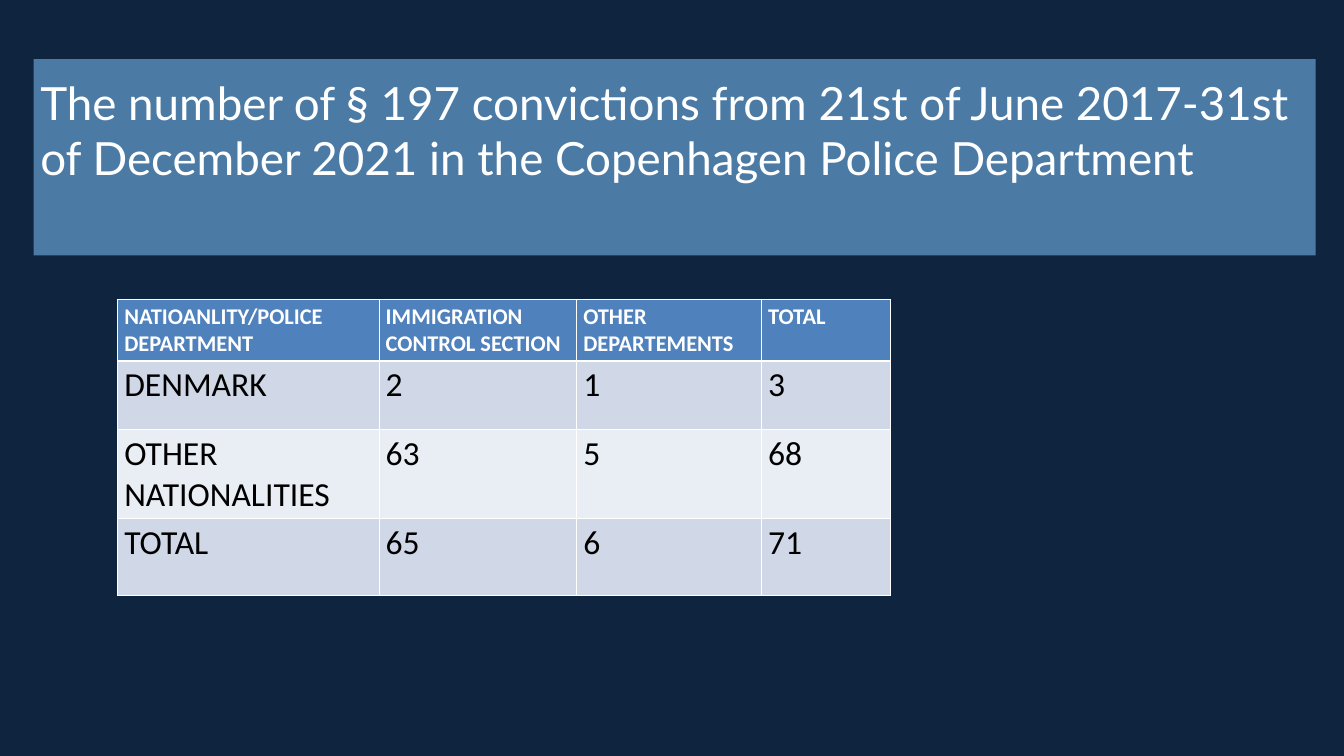
from dataclasses import dataclass

from lxml.etree import SubElement
from pptx import Presentation
from pptx.dml.color import RGBColor
from pptx.enum.text import MSO_ANCHOR, MSO_AUTO_SIZE, PP_ALIGN
from pptx.oxml.ns import qn
from pptx.util import Inches, Pt


@dataclass(frozen=True)
class Theme:
    background: str = "0F243E"
    title_band: str = "4B7BA5"
    header: str = "4F81BD"
    bands: tuple = ("D0D8E8", "E9EDF4")
    light: str = "FFFFFF"
    dark: str = "000000"
    title_font: str = "Lato"
    table_font: str = "Calibri"
    title_size: int = 49
    header_size: int = 24
    body_size: int = 36


theme = Theme()


def add_span(para, text, font, size, color, bold=False):
    span = para.add_run()
    span.text = text
    span.font.name = font
    span.font.size = Pt(size)
    span.font.bold = bold
    span.font.color.rgb = RGBColor.from_string(color)


def add_borders(cell, bottom_width):
    """Draw light borders; call before the fill, which must follow them in the XML."""
    properties = cell._tc.get_or_add_tcPr()
    for side, width in (("L", 1), ("R", 1), ("T", 1), ("B", bottom_width)):
        line = SubElement(properties, qn(f"a:ln{side}"), w=str(Pt(width)))
        fill = SubElement(line, qn("a:solidFill"))
        SubElement(fill, qn("a:srgbClr"), val=theme.light)


deck = Presentation()
deck.slide_width, deck.slide_height = Inches(20), Inches(11.25)
page = deck.slides.add_slide(deck.slide_layouts.get_by_name("Title Only"))
page.background.fill.solid()
page.background.fill.fore_color.rgb = RGBColor.from_string(theme.background)

# Title band
title = page.shapes.title
title.left, title.top = Inches(0.5), Inches(0.88)
title.width, title.height = Inches(19.08), Inches(2.92)
title.fill.solid()
title.fill.fore_color.rgb = RGBColor.from_string(theme.title_band)
frame = title.text_frame
frame.word_wrap = True
frame.auto_size = MSO_AUTO_SIZE.NONE
frame.vertical_anchor = MSO_ANCHOR.MIDDLE
frame.margin_bottom = Inches(0.87)  # lifts the two lines above the middle
para = frame.paragraphs[0]
para.alignment = PP_ALIGN.LEFT
add_span(
    para,
    "The number of § 197 convictions from 21st of June 2017-31st "
    "of December 2021 in the Copenhagen Police Department",
    theme.title_font, theme.title_size, theme.light,
)

# Convictions table
convictions = [
    ("NATIOANLITY/POLICE DEPARTMENT", "IMMIGRATION CONTROL SECTION", "OTHER DEPARTEMENTS", "TOTAL"),
    ("DENMARK", "2", "1", "3"),
    ("OTHER NATIONALITIES", "63", "5", "68"),
    ("TOTAL", "65", "6", "71"),
]
column_widths = (3.89, 2.94, 2.75, 1.92)
row_heights = (0.72, 1.02, 1.25, 1.15)

table = page.shapes.add_table(
    len(row_heights), len(column_widths),
    Inches(1.75), Inches(4.46), Inches(11.5), Inches(4.37),
).table
for column, width in zip(table.columns, column_widths):
    column.width = Inches(width)

for row_index, (row, height, texts) in enumerate(zip(table.rows, row_heights, convictions)):
    row.height = Inches(height)
    is_header = row_index == 0
    fill = theme.header if is_header else theme.bands[(row_index - 1) % 2]
    size = theme.header_size if is_header else theme.body_size
    color = theme.light if is_header else theme.dark
    for cell, text in zip(row.cells, texts):
        add_borders(cell, bottom_width=3 if is_header else 1)
        cell.fill.solid()
        cell.fill.fore_color.rgb = RGBColor.from_string(fill)
        add_span(cell.text_frame.paragraphs[0], text, theme.table_font, size, color, bold=is_header)

deck.save("out.pptx")
